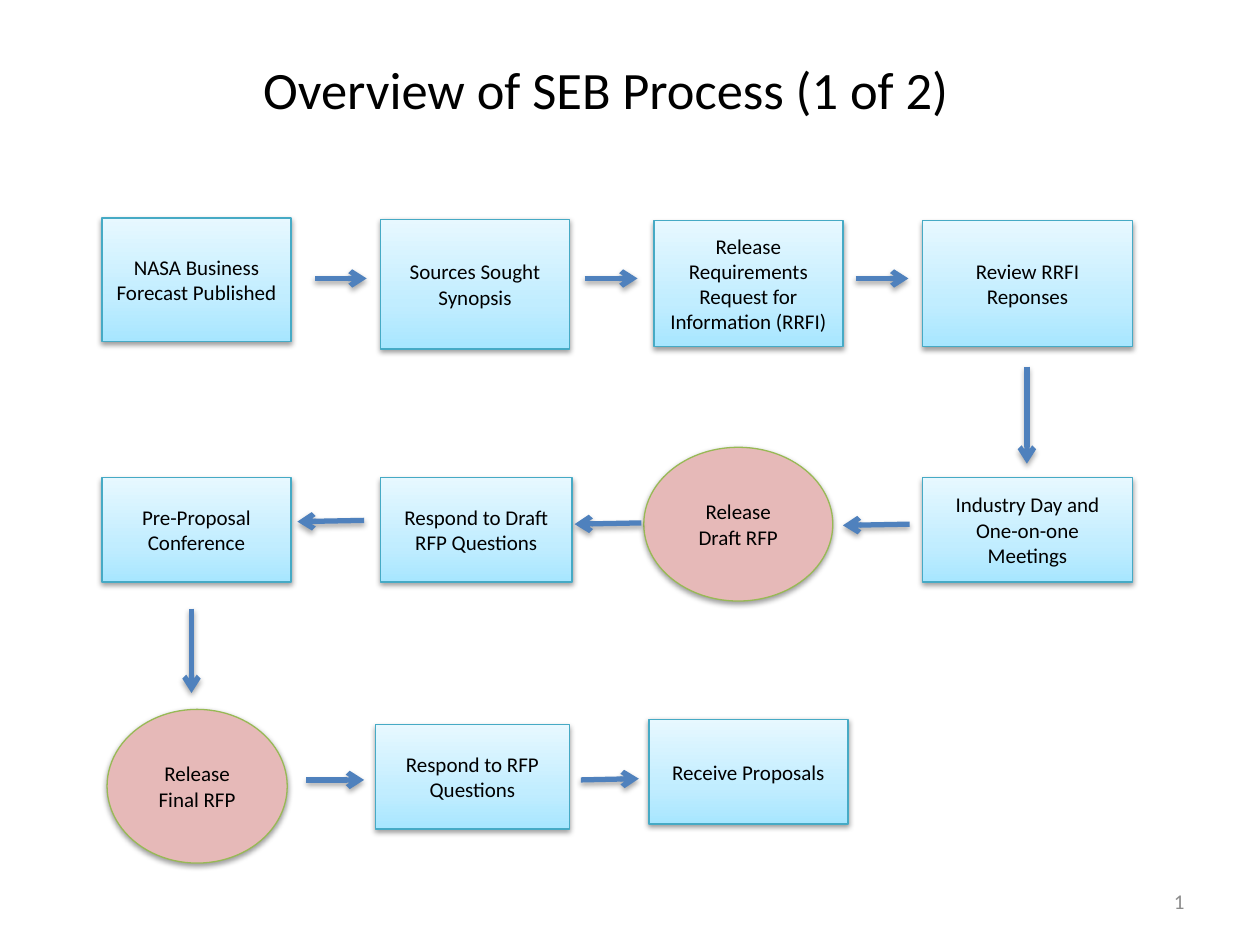
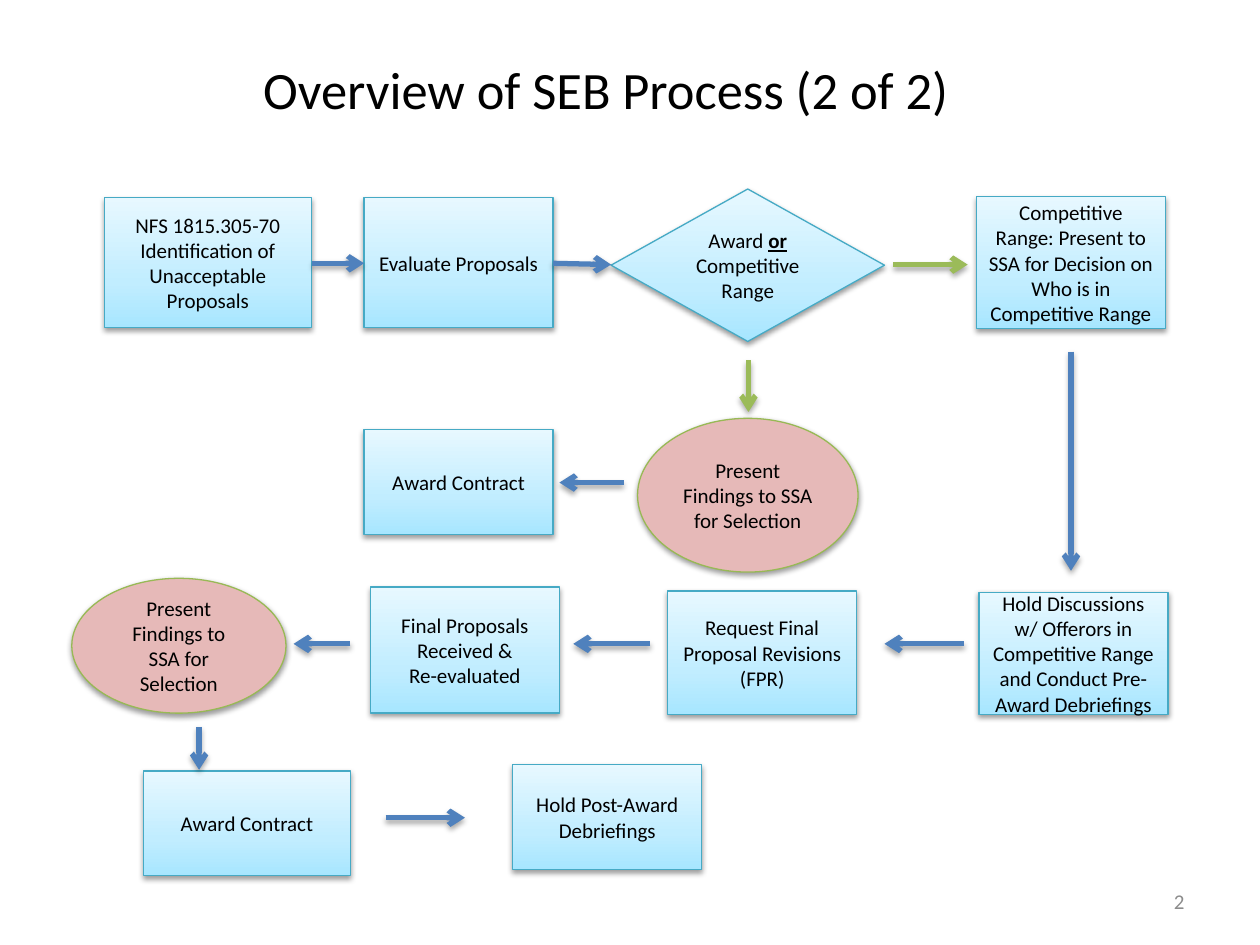
from copy import deepcopy
from lxml import etree
from pptx import Presentation
from pptx.dml.color import RGBColor
from pptx.enum.shapes import MSO_CONNECTOR, MSO_SHAPE
from pptx.enum.text import MSO_ANCHOR, PP_ALIGN
from pptx.oxml.ns import qn
from pptx.util import Inches, Pt

BOX = MSO_SHAPE.FLOWCHART_PROCESS
OVAL = MSO_SHAPE.OVAL
GEM = MSO_SHAPE.FLOWCHART_DECISION
LINE = MSO_CONNECTOR.STRAIGHT
MID = MSO_ANCHOR.MIDDLE
LEFT, RIGHT, CENTRE = PP_ALIGN.LEFT, PP_ALIGN.RIGHT, PP_ALIGN.CENTER

ink = RGBColor.from_string
BLUE, GREEN, BLACK, GREY = "4F81BD", "9BBB59", "000000", "8C8C8C"
PINK, TEAL, LIME = "E6B9B8", "46AAC5", "98B955"
SKY = [(0, "A7E6FF"), (0.35, "C1EDFF"), (1, "E7F8FF")]

HEAD = {"size": Pt(30), "name": "Calibri"}
BODY = {"size": Pt(12), "name": "Calibri"}

deck = Presentation()
deck.slide_width, deck.slide_height = Inches(10), Inches(7.5)
UNIT = deck.slide_width / 100


def grid(*cells):
    return [round(cell * UNIT) for cell in cells]


def write(shape, text, form, tone=BLACK, align=CENTRE):
    frame = shape.text_frame
    frame.word_wrap = True
    frame.vertical_anchor = MID
    for n, row in enumerate(text.split("\n")):
        para = frame.add_paragraph() if n else frame.paragraphs[0]
        para.alignment = align
        for i, part in enumerate(row.split("*")):
            run = para.add_run()
            run.text = part
            for key, value in form.items():
                setattr(run.font, key, value)
            run.font.color.rgb = ink(tone)
            if i % 2:
                run.font.bold = run.font.underline = True


flows = [
    (
        [
            (BOX, 8.1, 17.3, 15, 9.8, "NASA Business Forecast Published"),
            (BOX, 30.2, 17.4, 15, 10.3, "Sources Sought Synopsis"),
            (BOX, 51.9, 17.5, 15, 10, "Release Requirements Request for Information (RRFI)"),
            (BOX, 73.2, 17.5, 16.7, 10, "Review RRFI Reponses"),
            (BOX, 73.2, 37.9, 16.7, 8.3, "Industry Day and One-on-one Meetings"),
            (OVAL, 51.1, 35.5, 15, 12.2, "Release Draft RFP"),
            (BOX, 30.2, 37.9, 15.2, 8.3, "Respond to Draft RFP Questions"),
            (BOX, 8.1, 37.9, 15, 8.3, "Pre-Proposal Conference"),
            (OVAL, 8.5, 56.3, 14.3, 12.2, "Release Final RFP"),
            (BOX, 29.8, 57.5, 15.4, 8.3, "Respond to RFP Questions"),
            (BOX, 51.5, 57.1, 15.8, 8.3, "Receive Proposals"),
        ],
        [
            (25, 22.1, 29.1, 22.1, BLUE),
            (46.4, 22.1, 50.6, 22.1, BLUE),
            (67.9, 22.1, 72.1, 22.1, BLUE),
            (81.5, 29.1, 81.5, 36.8, BLUE),
            (72.2, 41.6, 66.9, 41.7, BLUE),
            (50.9, 41.5, 45.6, 41.6, BLUE),
            (28.9, 41.3, 23.6, 41.4, BLUE),
            (15.2, 48.3, 15.2, 55, BLUE),
            (24.3, 61.9, 28.9, 61.9, BLUE),
            (46.1, 61.9, 50.7, 61.8, BLUE),
        ],
    ),
    (
        [
            (BOX, 8.3, 15.7, 16.4, 10.3,
             "NFS 1815.305-70\nIdentification of Unacceptable Proposals"),
            (BOX, 28.9, 15.7, 15, 10.3, "Evaluate Proposals"),
            (GEM, 48.5, 15, 21.7, 12.1, "Award *or* Competitive Range"),
            (BOX, 77.5, 15.6, 15, 10.5,
             "Competitive Range: Present to SSA for Decision on Who is in Competitive Range"),
            (OVAL, 50.6, 33.2, 17.5, 12.2, "Present Findings to SSA for Selection"),
            (BOX, 28.9, 34.1, 15, 8.3, "Award Contract"),
            (BOX, 77.7, 47, 15, 9.7,
             "Hold Discussions w/ Offerors in Competitive Range and Conduct Pre-Award Debriefings"),
            (BOX, 53, 46.9, 15, 9.8, "Request Final Proposal Revisions (FPR)"),
            (BOX, 29.4, 46.6, 15, 10, "Final Proposals Received &\nRe-evaluated"),
            (OVAL, 5.7, 45.9, 17, 10.7, "Present Findings to SSA for Selection"),
            (BOX, 11.4, 61.2, 16.4, 8.3, "Award Contract"),
            (BOX, 40.7, 60.7, 15, 8.3, "Hold Post-Award Debriefings"),
        ],
        [
            (24.8, 20.9, 28.9, 20.9, BLUE),
            (43.9, 20.9, 48.5, 21, BLUE),
            (70.9, 21, 76.8, 21, GREEN),
            (59.4, 28.6, 59.4, 32.7, GREEN),
            (49.5, 38.3, 44.4, 38.3, BLUE),
            (85, 27.9, 85, 45.3, BLUE),
            (76.5, 51.1, 70.2, 51.1, BLUE),
            (51.6, 51.1, 45.5, 51.1, BLUE),
            (27.8, 51.1, 23.3, 51.1, BLUE),
            (15.8, 57.7, 15.8, 61.1, BLUE),
            (30.6, 64.9, 36.9, 64.9, BLUE),
        ],
    ),
]

for page, (steps, links) in enumerate(flows, 1):
    slide = deck.slides.add_slide(deck.slide_layouts[6])
    shapes = slide.shapes
    title = shapes.add_textbox(*grid(1.4, 3.3, 93.4, 7.5))
    write(title, f"Overview of SEB Process ({page} of {len(flows)})", HEAD)
    foot = shapes.add_textbox(*grid(71.7, 69.5, 23.3, 4))
    write(foot, str(page), BODY, GREY, RIGHT)
    cast = []

    for kind, *place, text in steps:
        step = shapes.add_shape(kind, *grid(*place))
        step.shadow.inherit = False
        if kind == OVAL:
            step.fill.solid()
            step.fill.fore_color.rgb = ink(PINK)
        else:
            step.fill.gradient()
            step.fill.gradient_angle = 90
            stops = step._element.spPr.find(".//" + qn("a:gsLst"))
            stops.insert(1, deepcopy(stops[0]))
            for stop, (share, tone) in zip(step.fill.gradient_stops, SKY):
                stop.position = share
                stop.color.rgb = ink(tone)
        step.line.color.rgb = ink(LIME if kind == OVAL else TEAL)
        step.line.width = Pt(0.75)
        write(step, text, BODY)
        cast.append((step._element.spPr.find(qn("a:effectLst")), 20000, 38000))

    for *ends, tone in links:
        link = shapes.add_connector(LINE, *grid(*ends))
        link.line.color.rgb = ink(tone)
        link.line.width = Pt(3)
        props = link._element.spPr
        etree.SubElement(props.find(qn("a:ln")), qn("a:tailEnd"), type="arrow")
        cast.append((etree.SubElement(props, qn("a:effectLst")), 23000, 35000))

    for effect, drop, alpha in cast:
        shade = etree.SubElement(effect, qn("a:outerShdw"), blurRad="40000",
                                 dist=str(drop), dir="5400000", rotWithShape="0")
        tint = etree.SubElement(shade, qn("a:srgbClr"), val=BLACK)
        etree.SubElement(tint, qn("a:alpha"), val=str(alpha))

deck.save("out.pptx")
